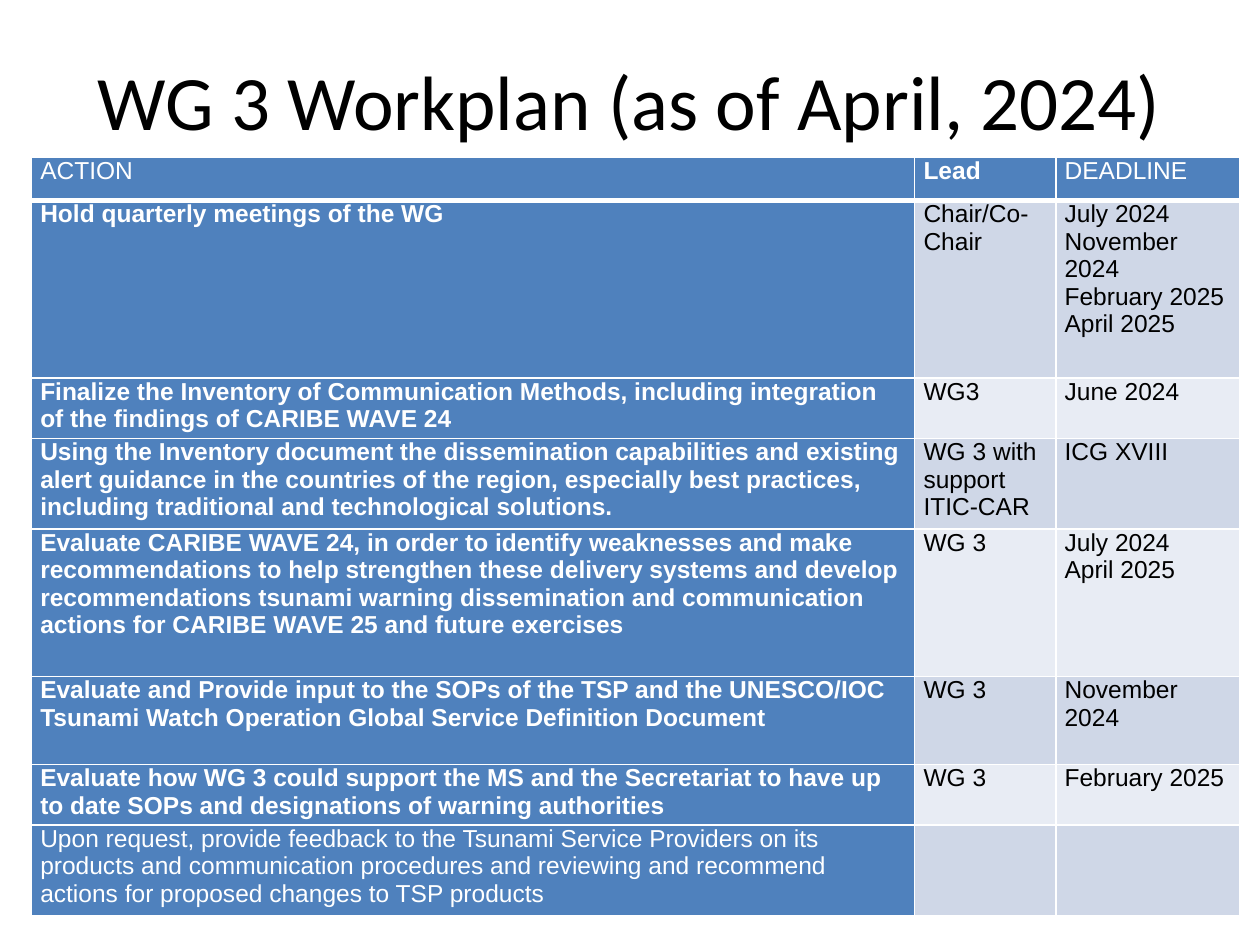
import pptx
import pptx.util
import pptx.dml.color
import pptx.enum.text
import pptx.oxml
import pptx.oxml.ns

Inches, Pt = pptx.util.Inches, pptx.util.Pt
RGBColor = pptx.dml.color.RGBColor

# Content: action, lead, deadlines
TITLE = "WG 3 Workplan (as of April, 2024)"
HEADER = ("ACTION", "Lead", ["DEADLINE"])
ACTIONS = [
    ("Hold quarterly meetings of the WG", "Chair/Co-Chair",
     ["July 2024", "November 2024", "February 2025", "April 2025"]),
    ("Finalize the Inventory of Communication Methods, including integration "
     "of the findings of CARIBE WAVE 24", "WG3", ["June 2024"]),
    ("Using the Inventory document the dissemination capabilities and existing "
     "alert guidance in the countries of the region, especially best practices, "
     "including traditional and technological solutions.",
     "WG 3 with support ITIC-CAR", ["ICG XVIII"]),
    ("Evaluate CARIBE WAVE 24, in order to identify weaknesses and make "
     "recommendations to help strengthen these delivery systems and develop "
     "recommendations tsunami warning dissemination and communication actions "
     "for CARIBE WAVE 25 and future exercises", "WG 3", ["July 2024", "April 2025"]),
    ("Evaluate and Provide input to the SOPs of the TSP and the UNESCO/IOC "
     "Tsunami Watch Operation Global Service Definition Document",
     "WG 3", ["November 2024"]),
    ("Evaluate how WG 3 could support the MS and the Secretariat to have up to "
     "date SOPs and designations of warning authorities", "WG 3", ["February 2025"]),
    ("Upon request, provide feedback to the Tsunami Service Providers on its "
     "products and communication procedures and reviewing and recommend actions "
     "for proposed changes to TSP products", "", []),
]
ROWS = [HEADER] + ACTIONS
COL_WIDTHS = [7.01, 1.12, 1.46]
ROW_HEIGHTS = [0.34, 1.41, 0.48, 0.72, 1.17, 0.7, 0.48, 0.72]

BLACK = RGBColor(0x00, 0x00, 0x00)
WHITE = RGBColor(0xFF, 0xFF, 0xFF)
BLUE = RGBColor(0x4F, 0x81, 0xBD)
BANDS = [RGBColor(0xE8, 0xEC, 0xF4), RGBColor(0xCF, 0xD7, 0xE7)]


def add_text(p, text, font="Arial", size=14, color=BLACK, bold=False):
    r = p.add_run()
    r.text = text
    r.font.name, r.font.size, r.font.bold = font, Pt(size), bold
    r.font.color.rgb = color


def set_borders(cell, **widths):
    """Draw white cell edges; widths maps L, R, T, B to points."""
    tcPr = cell._tc.get_or_add_tcPr()
    for i, (side, width) in enumerate(widths.items()):
        ln = pptx.oxml.parse_xml(
            f'<a:ln{side} {pptx.oxml.ns.nsdecls("a")} w="{Pt(width)}">'
            f'<a:solidFill><a:srgbClr val="{WHITE}"/></a:solidFill></a:ln{side}>')
        tcPr.insert(i, ln)


prs = pptx.Presentation()
prs.slide_width, prs.slide_height = Inches(10), Inches(7.5)
s = prs.slides.add_slide(prs.slide_layouts[5])

# Title
title = s.shapes.title
title.left, title.top = Inches(0.5), Inches(0.17)
title.width, title.height = Inches(9), Inches(1.25)
tf = title.text_frame
tf.vertical_anchor = pptx.enum.text.MSO_ANCHOR.MIDDLE
p = tf.paragraphs[0]
p.alignment = pptx.enum.text.PP_ALIGN.CENTER
add_text(p, TITLE, font="Calibri", size=44)

# Workplan table
table = s.shapes.add_table(
    len(ROWS), len(COL_WIDTHS), Inches(0.25), Inches(1.25),
    Inches(sum(COL_WIDTHS)), Inches(sum(ROW_HEIGHTS))).table
for col, width in zip(table.columns, COL_WIDTHS):
    col.width = Inches(width)
for row, height in zip(table.rows, ROW_HEIGHTS):
    row.height = Inches(height)

# Cells: blue header and action column, banded lead and deadline columns
for i, (action, lead, deadlines) in enumerate(ROWS):
    for j, lines in enumerate(([action], [lead], deadlines)):
        cell = table.cell(i, j)
        on_blue = i == 0 or j == 0
        cell.fill.solid()
        cell.fill.fore_color.rgb = BLUE if on_blue else BANDS[i % 2]
        cell.margin_left = cell.margin_right = Inches(0.07)
        cell.margin_top = cell.margin_bottom = 0
        set_borders(cell, L=1, R=1, T=3 if i == 1 else 1, B=3 if i == 0 else 1)
        bold = (i, j) == (0, 1) or (j == 0 and 0 < i < len(ACTIONS))
        tf = cell.text_frame
        for k, line in enumerate(filter(None, lines)):
            p = tf.add_paragraph() if k else tf.paragraphs[0]
            add_text(p, line, color=WHITE if on_blue else BLACK, bold=bold)

prs.save("out.pptx")
